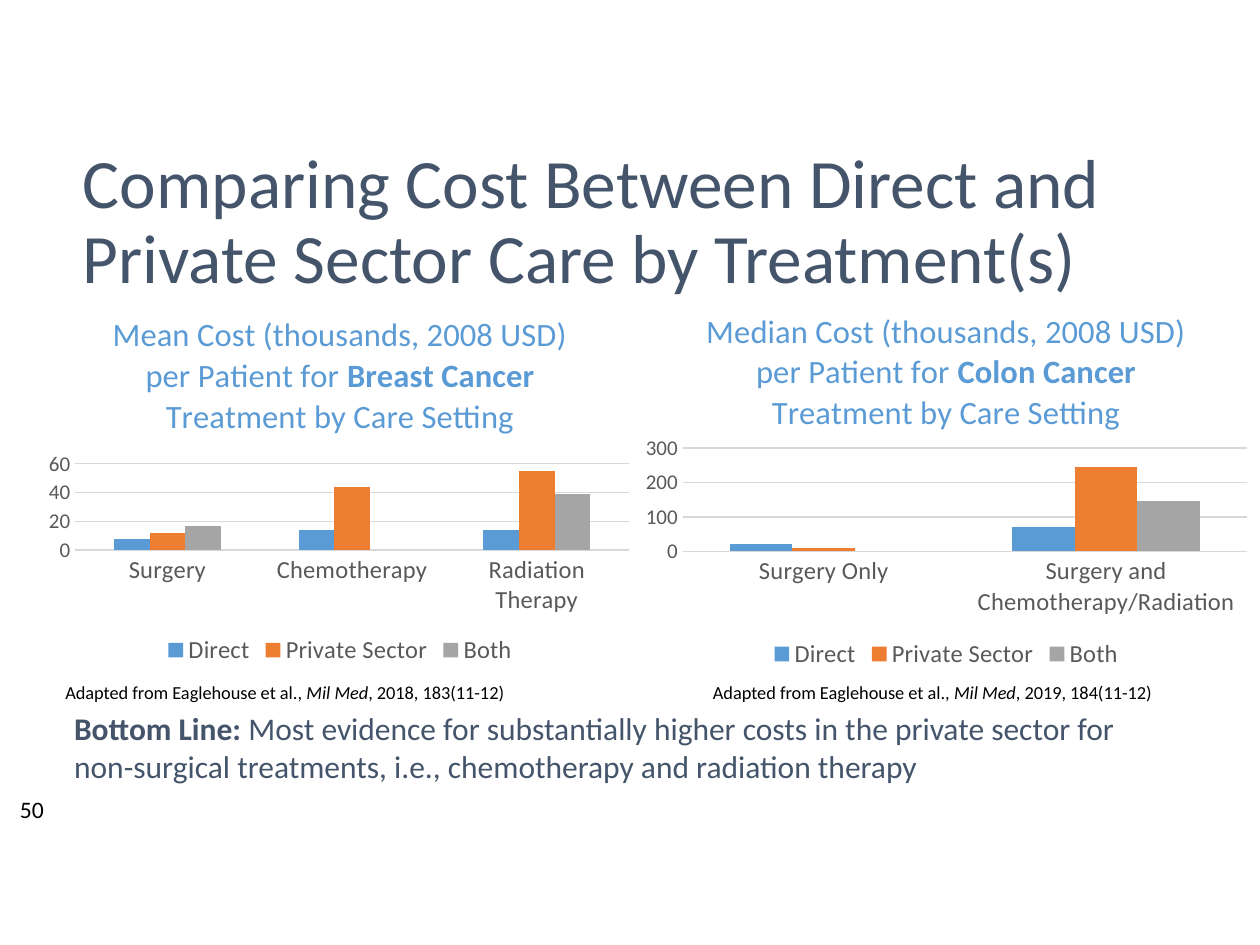
from lxml import etree
from pptx import Presentation
from pptx.chart.data import CategoryChartData
from pptx.dml.color import RGBColor
from pptx.enum.chart import XL_CHART_TYPE, XL_LEGEND_POSITION, XL_TICK_MARK
from pptx.enum.text import MSO_ANCHOR
from pptx.oxml import parse_xml
from pptx.oxml.ns import nsdecls
from pptx.util import Inches, Pt

COLUMN_CLUSTERED = XL_CHART_TYPE.COLUMN_CLUSTERED
BOTTOM = XL_LEGEND_POSITION.BOTTOM
NO_TICK = XL_TICK_MARK.NONE
MIDDLE = MSO_ANCHOR.MIDDLE

FONT = "Calibri"
BLACK = RGBColor(0x00, 0x00, 0x00)
SLATE = RGBColor(0x44, 0x54, 0x6A)
GRAY = RGBColor(0x59, 0x59, 0x59)
GRID = RGBColor(0xD9, 0xD9, 0xD9)
BLUE = RGBColor(0x5B, 0x9B, 0xD5)
SERIES_COLORS = {
    "Direct": BLUE,
    "Private Sector": RGBColor(0xED, 0x7D, 0x31),
    "Both": RGBColor(0xA5, 0xA5, 0xA5),
}


def style_font(font, size, color):
    font.name = FONT
    font.size = Pt(size)
    font.color.rgb = color


def add_text(slide, box, runs, size, color):
    shape = slide.shapes.add_textbox(*map(Inches, box))
    frame = shape.text_frame
    frame.word_wrap = True
    paragraph = frame.paragraphs[0]
    style_font(paragraph.font, size, color)
    for text, style in runs:
        run = paragraph.add_run()
        run.text = text
        if style:
            setattr(run.font, style, True)
    return frame


def add_title(slide, box, text):
    frame = add_text(slide, box, [(text, None)], 39.6, SLATE)
    frame.vertical_anchor = MIDDLE
    frame.paragraphs[0].line_spacing = 0.9


def add_source(slide, box, volume):
    runs = [("Adapted from Eaglehouse et al., ", None), ("Mil Med", "italic"), (volume, None)]
    add_text(slide, box, runs, 10.5, BLACK)


def style_chart_title(chart, measure, cancer):
    frame = chart.chart_title.text_frame
    paragraph = frame.paragraphs[0]
    style_font(paragraph.font, 18.6, BLUE)
    paragraph.font.bold = False
    parts = [(f"{measure} Cost (thousands, 2008 USD) per Patient for ", False),
             (f"{cancer} Cancer", True), (" Treatment by Care Setting", False)]
    for text, bold in parts:
        run = paragraph.add_run()
        run.text = text
        run.font.bold = bold
    chart.chart_title.include_in_layout = False


def place_plot(chart, plot_box):
    plot_area = chart.plots[0]._element.getparent()
    for layout in plot_area.findall("{*}layout"):
        plot_area.remove(layout)
    layout = parse_xml(f"<c:layout {nsdecls('c')}><c:manualLayout/></c:layout>")
    settings = [("layoutTarget", "inner"), ("xMode", "edge"), ("yMode", "edge")]
    settings += zip("xywh", map(str, plot_box))
    for name, value in settings:
        tag = layout[0].tag.replace("manualLayout", name)
        etree.SubElement(layout[0], tag).set("val", value)
    plot_area.insert(0, layout)


def add_cost_chart(slide, box, plot_box, title, categories, values, gap, axis_line):
    data = CategoryChartData()
    data.categories = categories
    for name, numbers in zip(SERIES_COLORS, values):
        data.add_series(name, numbers)
    chart = slide.shapes.add_chart(COLUMN_CLUSTERED, *map(Inches, box), data).chart
    style_font(chart.font, 10, BLACK)
    style_chart_title(chart, *title)
    place_plot(chart, plot_box)

    chart.has_legend = True
    chart.legend.position = BOTTOM
    chart.legend.include_in_layout = False
    style_font(chart.legend.font, 14, GRAY)

    plot = chart.plots[0]
    plot.gap_width = gap
    plot.overlap = 0
    plot.vary_by_categories = False
    for series in plot.series:
        series.format.fill.solid()
        series.format.fill.fore_color.rgb = SERIES_COLORS[series.name]

    for axis, size in ((chart.category_axis, 14), (chart.value_axis, 12)):
        axis.major_tick_mark = axis.minor_tick_mark = NO_TICK
        style_font(axis.tick_labels.font, size, GRAY)
        axis.format.line.fill.background()
    grid_lines = [chart.value_axis.major_gridlines.format.line]
    if axis_line:
        grid_lines.append(chart.category_axis.format.line)
    for line in grid_lines:
        line.color.rgb = GRID
        line.width = Pt(0.75)


def main():
    presentation = Presentation()
    presentation.slide_width = Inches(10)
    presentation.slide_height = Inches(7.5)
    slide = presentation.slides.add_slide(presentation.slide_layouts[6])

    add_title(slide, (0.56, 1.23, 8.43, 1.09),
              "Comparing Cost Between Direct and Private Sector Care by Treatment(s)")
    add_cost_chart(slide, (0.31, 2.34, 4.78, 2.98), (0.06, 0.45, 0.92, 0.23),
                   ("Mean", "Breast"), ["Surgery", "Chemotherapy", "Radiation Therapy"],
                   [(8, 14, 14), (12, 44, 55), (17, None, 39)], 219, True)
    add_cost_chart(slide, (5.02, 2.31, 4.98, 3.04), (0.08, 0.41, 0.9, 0.27),
                   ("Median", "Colon"), ["Surgery Only", "Surgery and Chemotherapy/Radiation"],
                   [(21, 70), (10, 246), (None, 145)], 150, False)
    for left, volume in ((0.42, ", 2018, 183(11-12)"), (5.56, ", 2019, 184(11-12)")):
        add_source(slide, (left, 5.36, 4.68, 0.28), volume)
    add_text(slide, (0.49, 5.58, 8.57, 0.71),
             [("Bottom Line: ", "bold"),
              ("Most evidence for substantially higher costs in the private sector for "
               "non-surgical treatments, i.e., chemotherapy and radiation therapy", None)],
             18, SLATE)
    add_text(slide, (0.06, 6.26, 0.5, 0.33), [("50", None)], 13.5, BLACK)
    presentation.save("out.pptx")


if __name__ == "__main__":
    main()
